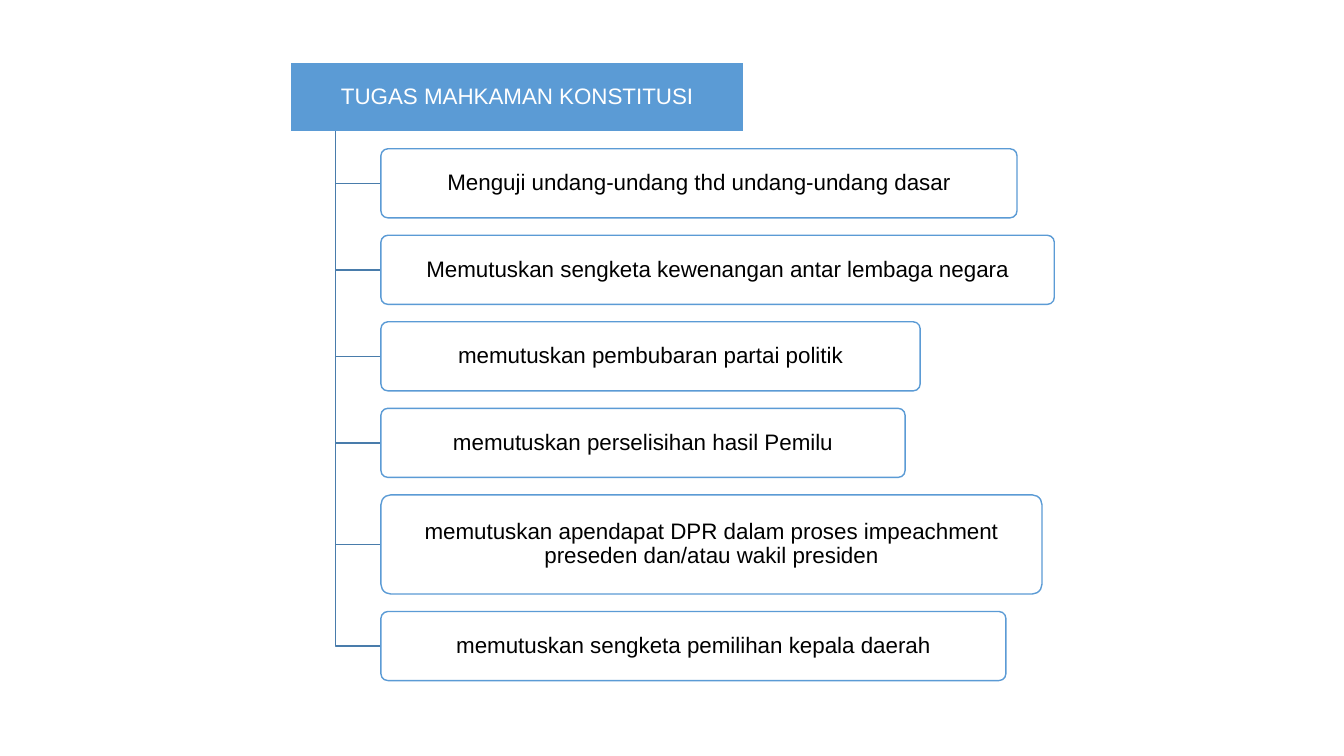
from lxml.etree import SubElement
from pptx import Presentation
from pptx.dml.color import RGBColor
from pptx.enum.shapes import MSO_SHAPE
from pptx.enum.text import MSO_ANCHOR, MSO_AUTO_SIZE, PP_ALIGN
from pptx.oxml.ns import qn
from pptx.util import Cm, Pt

BLUE = RGBColor(0x5B, 0x9B, 0xD5)
STEEL = RGBColor(0x49, 0x7C, 0xAB)
WHITE = RGBColor(0xFF, 0xFF, 0xFF)
BLACK = RGBColor(0x00, 0x00, 0x00)

LEFT, TOP = 7.32, 1.57
HEIGHT, GAP = 1.74, 0.44
TRUNK, INDENT = 8.46, 9.6

DUTIES = [
    ("Menguji undang-undang thd undang-undang dasar", 16.03, HEIGHT),
    ("Memutuskan sengketa kewenangan antar lembaga negara", 16.97, HEIGHT),
    ("memutuskan pembubaran partai politik", 13.59, HEIGHT),
    ("memutuskan perselisihan hasil Pemilu", 13.21, HEIGHT),
    ("memutuskan apendapat DPR dalam proses impeachment "
     "preseden dan/atau wakil presiden", 16.66, 2.5),
    ("memutuskan sengketa pemilihan kepala daerah", 15.75, HEIGHT),
]


def style(box, text, fill, line, color):
    """Paint a box and fill it with one centred paragraph."""
    box.fill.solid()
    box.fill.fore_color.rgb = fill
    box.line.color.rgb = line
    box.line.width = Pt(1)
    frame = box.text_frame
    frame.text = text
    frame.word_wrap = True
    frame.auto_size = MSO_AUTO_SIZE.NONE
    frame.vertical_anchor = MSO_ANCHOR.MIDDLE
    frame.margin_left = frame.margin_right = Cm(0.08)
    frame.margin_top = frame.margin_bottom = Cm(0.05)
    para = frame.paragraphs[0]
    para.alignment = PP_ALIGN.CENTER
    para.line_spacing = 0.9
    font = para.runs[0].font
    font.name = "Arial"
    font.size = Pt(16)
    font.color.rgb = color


deck = Presentation()
deck.slide_width, deck.slide_height = Cm(33.87), Cm(19.05)
slide = deck.slides.add_slide(deck.slide_layouts[5])
shapes = slide.shapes

# Heading: the title placeholder as a rounded box
title = shapes.title
title.left, title.top = Cm(LEFT), Cm(TOP)
title.width, title.height = Cm(11.43), Cm(HEIGHT)
geom = SubElement(title._element.spPr, qn("a:prstGeom"), prst="roundRect")
guides = SubElement(geom, qn("a:avLst"))
SubElement(guides, qn("a:gd"), name="adj", fmla="val 10000")
style(title, "TUGAS MAHKAMAN KONSTITUSI", BLUE, WHITE, WHITE)

# Duties: each hangs on an elbow line from the heading
start = TOP + HEIGHT
top = start + GAP
for text, width, height in DUTIES:
    middle = top + height / 2
    path = shapes.build_freeform(Cm(TRUNK), Cm(start))
    path.add_line_segments(
        [(Cm(TRUNK), Cm(middle)), (Cm(INDENT), Cm(middle))], close=False)
    elbow = path.convert_to_shape()
    elbow.shadow.inherit = False
    elbow.fill.background()
    elbow.line.color.rgb = STEEL
    elbow.line.width = Pt(1)

    box = shapes.add_shape(MSO_SHAPE.ROUNDED_RECTANGLE,
                           Cm(INDENT), Cm(top), Cm(width), Cm(height))
    box.adjustments[0] = 0.1
    box.shadow.inherit = False
    style(box, text, WHITE, BLUE, BLACK)
    paint = box._element.spPr.find(qn("a:solidFill"))
    SubElement(paint[0], qn("a:alpha"), val="90000")
    top += height + GAP

deck.save("out.pptx")
